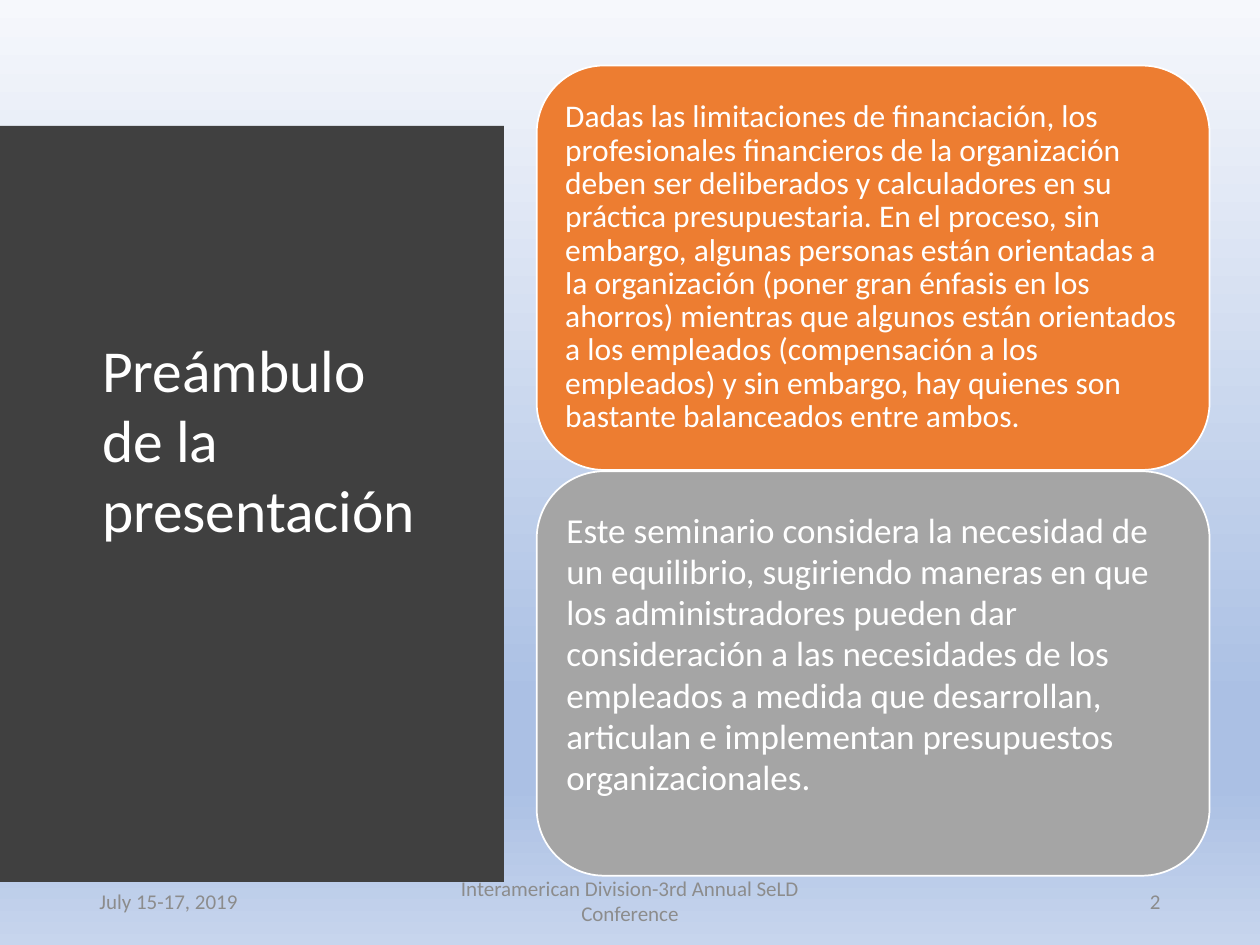
from pptx import Presentation
from pptx.dml.color import RGBColor
from pptx.enum.shapes import MSO_SHAPE
from pptx.enum.text import MSO_ANCHOR, MSO_AUTO_SIZE, PP_ALIGN
from pptx.oxml import parse_xml
from pptx.oxml.ns import nsdecls
from pptx.util import Inches, Pt

FONT = "Calibri"
WHITE, DARK, ORANGE, GRAY, MUTED = "FFFFFF", "404040", "ED7D31", "A5A5A5", "8C8C8C"
SKY = [(0, "F6F8FC"), (74, "ABC0E4"), (83, "ABC0E4"), (100, "C7D5ED")]

# Shared rows and columns, in inches
TOP, BOTTOM = 0.52, 6.96
PANEL_LEFT, PANEL_EDGE, PANEL_BULGE = 0.4, 3.81, 0.18
CARD_LEFT, CARD_WIDTH, CARD_HEIGHT, CARD_GAP = 4.26, 5.34, 3.21, 0.01
FOOTER_TOP, FOOTER_HEIGHT = 6.95, 0.4

CARDS = [
    # text, fill, size, line spacing, inset, extra bottom inset
    ("Dadas las limitaciones de financiación, los profesionales financieros de la "
     "organización deben ser deliberados y calculadores en su práctica presupuestaria. "
     "En el proceso, sin embargo, algunas personas están orientadas a la organización "
     "(poner gran énfasis en los ahorros) mientras que algunos están orientados a los "
     "empleados (compensación a los empleados) y sin embargo, hay quienes son bastante "
     "balanceados entre ambos.", ORANGE, 18, 0.88, 0.07, 0),
    ("Este seminario considera la necesidad de un equilibrio, sugiriendo maneras en que "
     "los administradores pueden dar consideración a las necesidades de los empleados a "
     "medida que desarrollan, articulan e implementan presupuestos organizacionales.",
     GRAY, 20, 0.98, 0.08, 0.3),
]
FOOTERS = [
    ("July 15-17, 2019", 0.69, 2.25, PP_ALIGN.LEFT),
    ("Interamerican Division-3rd Annual SeLD Conference", 3.31, 3.38, PP_ALIGN.CENTER),
    ("2", 7.06, 2.25, PP_ALIGN.RIGHT),
]


def color(value):
    return RGBColor.from_string(value)


def paint(shape, fill):
    shape.shadow.inherit = False
    shape.fill.solid()
    shape.fill.fore_color.rgb = color(fill)


def write(shape, text, size, ink, align=PP_ALIGN.LEFT, spacing=1.0):
    frame = shape.text_frame
    frame.word_wrap = True
    frame.auto_size = MSO_AUTO_SIZE.NONE
    frame.vertical_anchor = MSO_ANCHOR.MIDDLE
    para = frame.paragraphs[0]
    para.alignment = align
    para.line_spacing = spacing
    span = para.add_run()
    span.text = text
    span.font.name = FONT
    span.font.size = Pt(size)
    span.font.color.rgb = color(ink)
    return frame


def set_background(page):
    page.background.fill.gradient()
    page.background.fill.gradient_angle = 270
    stops = page.background._cSld.find(".//{*}gsLst")
    for stop in list(stops):
        stops.remove(stop)
    for percent, value in SKY:
        stops.append(parse_xml(
            f'<a:gs {nsdecls("a")} pos="{percent * 1000}">'
            f'<a:srgbClr val="{value}"/></a:gs>'))


def add_panel(page, steps=40):
    """Dark panel whose right side bulges along a parabola."""
    points = []
    for step in range(steps + 1):
        share = step / steps
        x = PANEL_EDGE + PANEL_BULGE * (1 - (2 * share - 1) ** 2)
        points.append((x, TOP + share * (BOTTOM - TOP)))
    points.append((PANEL_LEFT, BOTTOM))
    builder = page.shapes.build_freeform(PANEL_LEFT, TOP, scale=Inches(1))
    builder.add_line_segments(points, close=True)
    panel = builder.convert_to_shape()
    paint(panel, DARK)
    panel.line.fill.background()


def add_title(page, text):
    title = page.shapes.title
    title.left, title.top = Inches(0.71), Inches(1.11)
    title.width, title.height = Inches(2.8), Inches(5.24)
    frame = write(title, text, 34, WHITE, spacing=0.98)
    frame.margin_bottom = Inches(0.5)
    # Bring the title in front of the panel
    page.shapes._spTree.append(title._element)


def add_card(page, row, text, fill, size, spacing, inset, extra):
    top = TOP + row * (CARD_HEIGHT + CARD_GAP)
    card = page.shapes.add_shape(
        MSO_SHAPE.ROUNDED_RECTANGLE, Inches(CARD_LEFT), Inches(top),
        Inches(CARD_WIDTH), Inches(CARD_HEIGHT))
    paint(card, fill)
    card.line.color.rgb = color(WHITE)
    card.line.width = Pt(1)
    frame = write(card, text, size, WHITE, spacing=spacing)
    frame.margin_left = frame.margin_right = frame.margin_top = Inches(inset)
    frame.margin_bottom = Inches(inset + extra)


def add_footer(page, text, left, width, align):
    box = page.shapes.add_textbox(
        Inches(left), Inches(FOOTER_TOP), Inches(width), Inches(FOOTER_HEIGHT))
    write(box, text, 12, MUTED, align)


def main():
    deck = Presentation()
    deck.slide_width, deck.slide_height = Inches(10), Inches(7.5)
    page = deck.slides.add_slide(deck.slide_layouts[5])
    set_background(page)
    add_panel(page)
    add_title(page, "Preámbulo de la presentación")
    for row, card in enumerate(CARDS):
        add_card(page, row, *card)
    for footer in FOOTERS:
        add_footer(page, *footer)
    deck.save("out.pptx")


if __name__ == "__main__":
    main()
